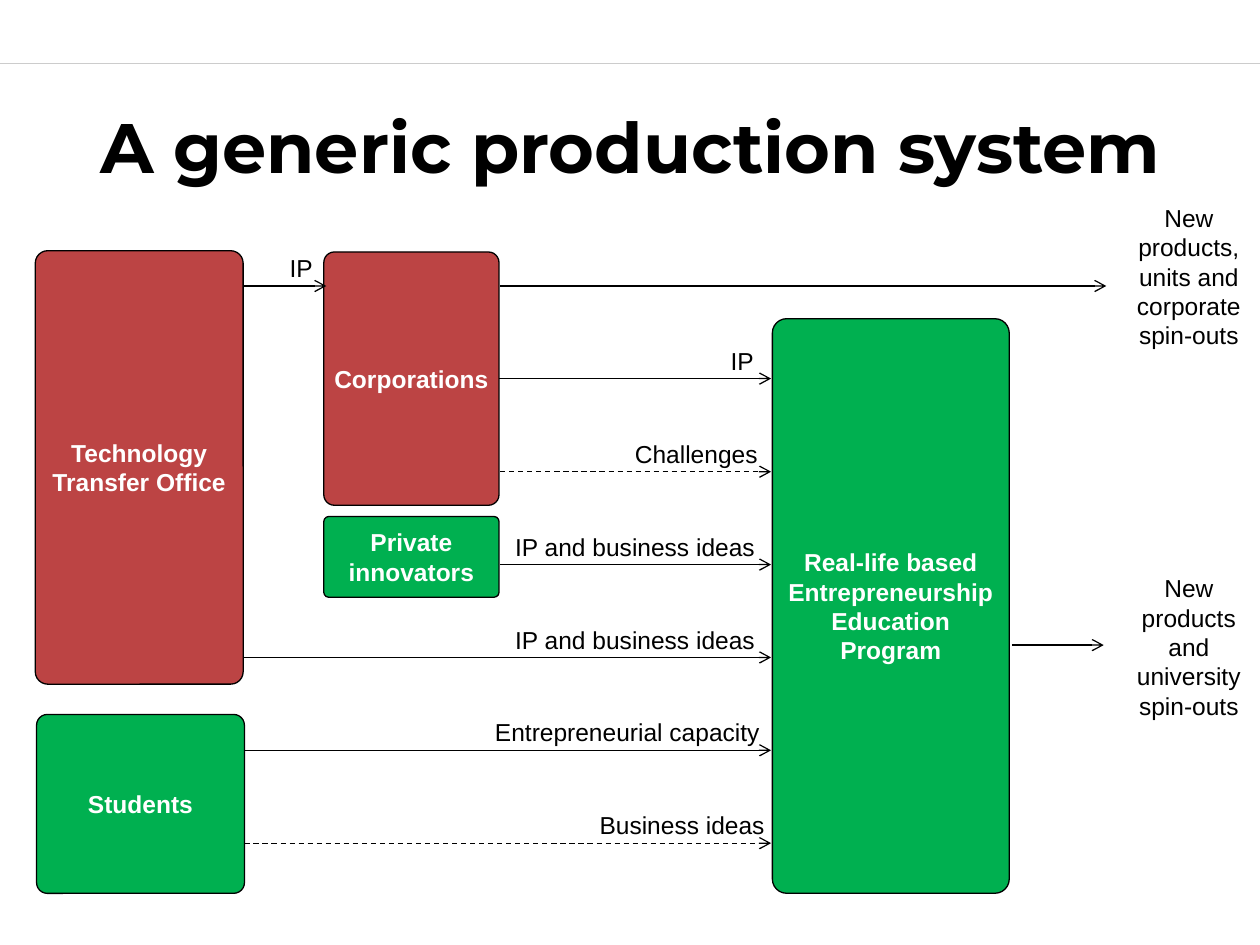
from dataclasses import dataclass
from typing import NamedTuple, Optional

from pptx import Presentation
from pptx.dml.color import RGBColor as RGB
from pptx.enum.dml import MSO_LINE_DASH_STYLE as Dash
from pptx.enum.shapes import MSO_CONNECTOR as Link, MSO_SHAPE as Form
from pptx.enum.text import MSO_ANCHOR as Anchor, MSO_AUTO_SIZE as Fit, PP_ALIGN as Align
from pptx.oxml.ns import qn
from pptx.util import Inches, Pt


@dataclass(frozen=True)
class Theme:
    black: RGB = RGB(0x00, 0x00, 0x00)
    white: RGB = RGB(0xFF, 0xFF, 0xFF)
    red: RGB = RGB(0xBC, 0x44, 0x44)
    green: RGB = RGB(0x00, 0xB0, 0x50)
    grey: RGB = RGB(0xCC, 0xCC, 0xCC)
    head: str = "Montserrat"
    body: str = "Arial"
    big: int = 40
    small: int = 14
    thin: float = 0.25
    rule: float = 0.75


class Block(NamedTuple):
    text: str
    col: float
    row: float
    wide: float
    high: float
    fill: RGB


class Flow(NamedTuple):
    lane: int
    start: float
    stop: float
    text: str = ""
    left: float = 0  # column where the label starts
    wide: float = 0
    dash: bool = False
    source: Optional[str] = None  # block whose right side it leaves


class Result(NamedTuple):
    text: str
    row: float


# Grid: 100 columns by 75 rows; flows run in evenly spaced lanes
WIDTH, HEIGHT = Inches(10), Inches(7.5)
COL, ROW = WIDTH / 100, HEIGHT / 75
TOP, STEP = 22.7, 7.37
RISE, LABEL = 3.1, 3.4
HUB, MID, EDGE = 61.2, 39.7, 19.4
T = Theme()

BLOCKS = [
    Block("Real-life based Entrepreneurship Education Program",
          61.3, 25.3, 18.8, 45.6, T.green),
    Block("Technology Transfer Office", 2.8, 19.9, 16.5, 34.4, T.red),
    Block("Students", 2.9, 56.7, 16.5, 14.2, T.green),
    Block("Corporations", 25.7, 20, 13.9, 20.1, T.red),
    Block("Private innovators", 25.7, 41, 13.9, 6.4, T.green),
]
FLOWS = [
    Flow(0, EDGE, 25.9, "IP", 22, 3.9),
    Flow(0, MID, 87.8),
    Flow(1, MID, HUB, "IP", 57, 3.9, source="Corporations"),
    Flow(2, MID, HUB, "Challenges", 49.4, 11.8, dash=True),
    Flow(3, MID, HUB, "IP and business ideas", 39.9, 21.7),
    Flow(4, EDGE, HUB, "IP and business ideas", 39.9, 21.7),
    Flow(5, EDGE, HUB, "Entrepreneurial capacity", 38.3, 23.1),
    Flow(6, EDGE, HUB, "Business ideas", 46.6, 15.2, dash=True),
]
RESULTS = [
    Result("New products, units and corporate spin-outs", 15.6),
    Result("New products and university spin-outs", 45),
]


def place(col: float, row: float, wide: float, high: float) -> tuple:
    return round(col * COL), round(row * ROW), round(wide * COL), round(high * ROW)


def write(frame, text: str, color: RGB, size: int = T.small, face: str = T.body,
          bold: bool = False, align=Align.CENTER) -> None:
    frame.text = text
    para = frame.paragraphs[0]
    para.alignment = align
    font = para.font
    font.name, font.size, font.bold = face, Pt(size), bold
    font.color.rgb = color


def draw_line(slide, start: float, stop: float, row: float,
              color: RGB = T.black, width: float = T.rule):
    x, y, span, _ = place(start, row, stop - start, 0)
    line = slide.shapes.add_connector(Link.STRAIGHT, x, y, x + span, y)
    line.line.color.rgb = color
    line.line.width = Pt(width)
    props = line.line._get_or_add_ln().getparent()
    props.append(props.makeelement(qn("a:effectLst"), {}))
    return line


def draw_block(slide, item: Block):
    box = slide.shapes.add_shape(
        Form.ROUNDED_RECTANGLE, *place(item.col, item.row, item.wide, item.high))
    box.adjustments[0] = 0.06
    box.shadow.inherit = False
    box.fill.solid()
    box.fill.fore_color.rgb = item.fill
    box.line.color.rgb = T.black
    box.line.width = Pt(T.rule)
    frame = box.text_frame
    frame.word_wrap = True
    frame.vertical_anchor = Anchor.MIDDLE
    frame.margin_left = frame.margin_right = Inches(0.04)
    frame.margin_top = frame.margin_bottom = Inches(0.05)
    write(frame, item.text, T.white, bold=True)
    return box


def draw_text(slide, text: str, area: tuple, wrap: bool, align) -> None:
    frame = slide.shapes.add_textbox(*place(*area)).text_frame
    frame.word_wrap = wrap
    frame.auto_size = Fit.SHAPE_TO_FIT_TEXT
    write(frame, text, T.black, align=align)


def draw_arrow(slide, start: float, stop: float, row: float, dash: bool = False):
    line = draw_line(slide, start, stop, row)
    if dash:
        line.line.dash_style = Dash.DASH
    stroke = line.line._get_or_add_ln()
    stroke.append(stroke.makeelement(qn("a:tailEnd"), {"type": "arrow"}))
    return line


def draw_flow(slide, flow: Flow, boxes: dict) -> None:
    row = TOP + flow.lane * STEP
    line = draw_arrow(slide, flow.start, flow.stop, row, flow.dash)
    if flow.source:
        line.begin_connect(boxes[flow.source], 3)
        line.end_y = line.begin_y
    if flow.text:
        draw_text(slide, flow.text, (flow.left, row - RISE, flow.wide, LABEL),
                  False, Align.LEFT)


def main() -> None:
    deck = Presentation()
    deck.slide_width, deck.slide_height = WIDTH, HEIGHT
    slide = deck.slides.add_slide(deck.slide_layouts[5])

    # Header rule and title
    draw_line(slide, 0, 100, 5, T.grey, T.thin)
    title = slide.shapes.title
    title.left, title.top, title.width, title.height = place(2.9, 7.4, 94.2, 8.3)
    title.text_frame.vertical_anchor = Anchor.MIDDLE
    write(title.text_frame, "A generic production system", T.black,
          T.big, T.head, True)

    # Actors and the flows between them
    boxes = {item.text: draw_block(slide, item) for item in BLOCKS}
    for flow in FLOWS:
        draw_flow(slide, flow, boxes)

    # Results on the right
    draw_arrow(slide, 80.3, 87.6, 51.2)
    for item in RESULTS:
        draw_text(slide, item.text, (87.9, item.row, 12.9, 12.8), True, Align.CENTER)

    deck.save("out.pptx")


if __name__ == "__main__":
    main()
